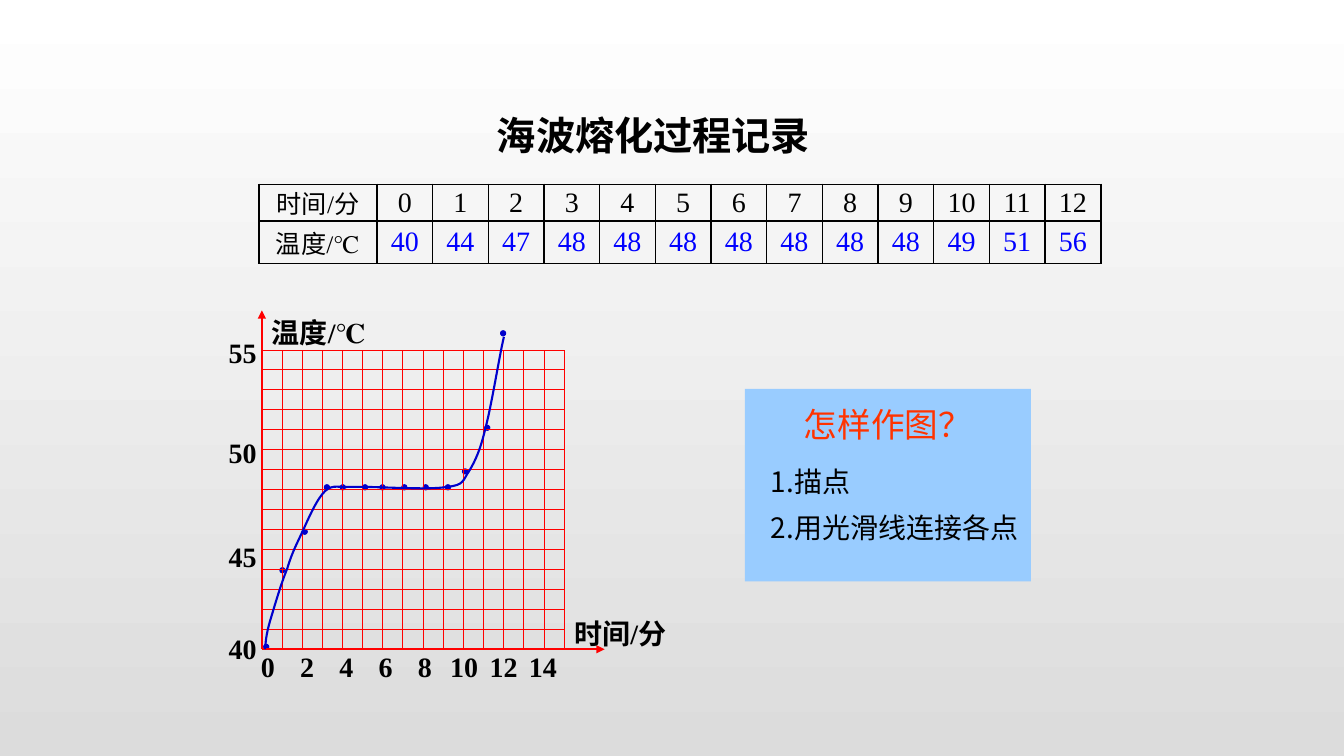
import collections

import lxml.etree
import pptx
import pptx.dml.color
import pptx.enum.shapes
import pptx.enum.text
import pptx.oxml.ns
import pptx.util

Cm = pptx.util.Cm
Pt = pptx.util.Pt
RGBColor = pptx.dml.color.RGBColor
qn = pptx.oxml.ns.qn
ALIGN = pptx.enum.text.PP_ALIGN
ANCHOR = pptx.enum.text.MSO_ANCHOR
SHAPE = pptx.enum.shapes.MSO_SHAPE

BLACK = RGBColor(0x00, 0x00, 0x00)
WHITE = RGBColor(0xFF, 0xFF, 0xFF)
PALE_GRAY = RGBColor(0xDC, 0xDC, 0xDC)
VALUE_BLUE = RGBColor(0x00, 0x00, 0xFF)
CURVE_BLUE = RGBColor(0x00, 0x00, 0xCC)
PANEL_BLUE = RGBColor(0x99, 0xCC, 0xFF)
GRID_RED = RGBColor(0xFF, 0x00, 0x00)
QUESTION_RED = RGBColor(0xFF, 0x33, 0x00)
SANS = "Noto Sans CJK SC"
SERIF = "Times New Roman"

TEMPERATURES = [40, 44, 47, 48, 48, 48, 48, 48, 48, 48, 49, 51, 56]
STEPS = ["1.描点", "2.用光滑线连接各点"]
GRID_COUNT = 15
GRID_WIDTH, GRID_HEIGHT = 7.62, 7.54
DOT_SIZE = 0.13
DOTS = [(0.11, 0.06), (0.52, 1.99), (1.08, 2.96), (1.64, 4.08), (2.04, 4.08),
        (2.6, 4.08), (3.04, 4.08), (3.59, 4.08), (4.13, 4.08), (4.69, 4.08),
        (5.12, 4.48), (5.68, 5.58), (6.08, 7.96)]
CURVE = [(0.08, 0), (0.1, 0.18), (0.1, 0.33), (0.2, 0.69),
         (0.3, 1.02), (0.48, 1.65), (0.64, 2.03),
         (0.76, 2.44), (0.89, 2.67), (1.04, 3),
         (1.19, 3.33), (1.4, 3.81), (1.6, 3.99),
         (1.78, 4.17), (2.01, 4.06), (2.16, 4.09),
         (2.31, 4.09), (2.16, 4.09), (2.57, 4.09),
         (3, 4.09), (4.24, 4.01), (4.67, 4.09),
         (5.11, 4.14), (5.05, 4.24), (5.23, 4.5),
         (5.38, 4.75), (5.51, 5.03), (5.64, 5.59),
         (5.79, 6.15), (5.99, 7.42), (6.1, 7.87)]
TEMPERATURE_MARKS = {40: 0.58, 45: 2.9, 50: 5.51, 55: 8.03}

Box = collections.namedtuple("Box", "left top width height")


def lengths(box):
    return [Cm(value) for value in box]


def place(shape, box):
    shape.left, shape.top, shape.width, shape.height = lengths(box)


def write(paragraph, text, size, color=BLACK, font=SERIF, bold=False, align=ALIGN.LEFT):
    paragraph.alignment = align
    run = paragraph.add_run()
    run.text = text
    run.font.size = Pt(size)
    run.font.bold = bold
    run.font.color.rgb = color
    run.font.name = font
    lxml.etree.SubElement(run.font._element, qn("a:ea"), typeface=SANS)


def add_label(slide, box, text, align=ALIGN.LEFT, wrap=False):
    label = slide.shapes.add_textbox(*lengths(box))
    label.text_frame.word_wrap = wrap
    write(label.text_frame.paragraphs[0], text, 20, bold=True, align=align)


def add_line(slide, start, end, width, arrow=False):
    line = slide.shapes.add_connector(
        pptx.enum.shapes.MSO_CONNECTOR.STRAIGHT, *lengths(start + end))
    line.line.color.rgb = GRID_RED
    line.line.width = Pt(width)
    properties = line.element.spPr
    if arrow:
        lxml.etree.SubElement(properties.find(qn("a:ln")), qn("a:tailEnd"), type="triangle")
    lxml.etree.SubElement(properties, qn("a:effectLst"))


def paint_background(slide):
    fill = slide.background.fill
    fill.gradient()
    fill.gradient_angle = 270
    for stop, color, position in zip(fill.gradient_stops, (WHITE, PALE_GRAY), (0, 1)):
        stop.color.rgb = color
        stop.position = position


def fill_title(slide, box):
    title = slide.shapes.title
    place(title, box)
    title.text_frame.word_wrap = False
    title.text_frame.vertical_anchor = ANCHOR.MIDDLE
    write(title.text_frame.paragraphs[0], "海波熔化过程记录", 28, font=SANS, bold=True)


def set_borders(cell, widths):
    for index, (side, width) in enumerate(zip("LRTB", widths)):
        border = lxml.etree.Element(qn("a:ln" + side), w=str(Pt(width)))
        fill = lxml.etree.SubElement(border, qn("a:solidFill"))
        lxml.etree.SubElement(fill, qn("a:srgbClr"), val=str(BLACK))
        cell._tc.get_or_add_tcPr().insert(index, border)


def add_record_table(slide, box):
    rows = [["时间/分", *range(len(TEMPERATURES))], ["温度/℃", *TEMPERATURES]]
    last = len(TEMPERATURES)
    table = slide.shapes.add_table(len(rows), last + 1, *lengths(box)).table
    table.first_row = table.horz_banding = False
    heading_width = 2.97
    for index, column in enumerate(table.columns):
        column.width = Cm((box.width - heading_width) / last if index else heading_width)
    for row, height in zip(table.rows, (0.91, 1.07)):
        row.height = Cm(height)
    for row_index, values in enumerate(rows):
        for column_index, value in enumerate(values):
            cell = table.cell(row_index, column_index)
            cell.margin_left = cell.margin_right = cell.margin_top = cell.margin_bottom = 0
            cell.vertical_anchor = ANCHOR.MIDDLE
            cell.fill.background()
            outer = (column_index == 0, column_index == last, row_index == 0, row_index == 1)
            set_borders(cell, [1.5 if edge else 1 for edge in outer])
            write(cell.text_frame.paragraphs[0], str(value), 20 if column_index else 18,
                  VALUE_BLUE if row_index and column_index else BLACK, align=ALIGN.CENTER)


def add_method_panel(slide, box):
    panel = slide.shapes.add_shape(SHAPE.RECTANGLE, *lengths(box))
    panel.shadow.inherit = False
    panel.fill.solid()
    panel.fill.fore_color.rgb = PANEL_BLUE
    panel.line.fill.background()
    question = panel.text_frame
    question.vertical_anchor = ANCHOR.TOP
    question.margin_left, question.margin_top = Cm(1.49), Cm(0.38)
    question.margin_right = question.margin_bottom = 0
    write(question.paragraphs[0], "怎样作图？", 24, QUESTION_RED, SANS)

    steps = slide.placeholders[1]
    place(steps, Box(box.left + 0.4, box.top + 1.78, box.width - 0.4, 2.6))
    steps.text_frame.auto_size = pptx.enum.text.MSO_AUTO_SIZE.NONE
    steps.text_frame.word_wrap = False
    for index, step in enumerate(STEPS):
        paragraph = steps.text_frame.paragraphs[0] if index == 0 else steps.text_frame.add_paragraph()
        properties = paragraph._p.get_or_add_pPr()
        properties.set("marL", "0")
        properties.set("indent", "0")
        lxml.etree.SubElement(properties, qn("a:buNone"))
        paragraph.space_before = Pt(8.5 if index else 0)
        write(paragraph, step, 20, font=SANS)
    steps.element.addprevious(panel.element)


def add_curve(slide, points):
    start, *controls = [lengths(point) for point in points]
    builder = slide.shapes.build_freeform(*start)
    builder.add_line_segments(controls, close=False)
    curve = builder.convert_to_shape()
    curve.shadow.inherit = False
    curve.fill.background()
    curve.line.color.rgb = CURVE_BLUE
    curve.line.width = Pt(1.5)
    segments = curve.element.xpath(".//a:lnTo")
    for first in range(0, len(segments), 3):
        bezier = lxml.etree.Element(qn("a:cubicBezTo"))
        segments[first].addprevious(bezier)
        for segment in segments[first:first + 3]:
            bezier.append(segment[0])
            segment.getparent().remove(segment)


def add_melting_graph(slide, box):
    origin_x, origin_y = box.left + 1.09, box.top + 8.54

    def at(x, y):
        return origin_x + x, origin_y - y

    for x, y in DOTS:
        left, top = at(x - DOT_SIZE / 2, y + DOT_SIZE / 2)
        dot = slide.shapes.add_shape(SHAPE.OVAL, *lengths((left, top, DOT_SIZE, DOT_SIZE)))
        dot.shadow.inherit = False
        dot.fill.solid()
        dot.fill.fore_color.rgb = dot.line.color.rgb = CURVE_BLUE
        dot.line.width = Pt(0.75)
    add_line(slide, at(0, 0), at(0, 8.54), 1.5, arrow=True)
    add_line(slide, at(0, 0), at(8.64, 0), 1.5, arrow=True)
    for index in range(1, GRID_COUNT + 1):
        x, y = GRID_WIDTH * index / GRID_COUNT, GRID_HEIGHT * index / GRID_COUNT
        add_line(slide, at(x, GRID_HEIGHT), at(x, 0), 0.75)
        add_line(slide, at(0, y), at(GRID_WIDTH, y), 0.75)
    add_label(slide, Box(origin_x, box.top, 3.7, 1.12), "温度/℃")
    add_label(slide, Box(*at(7.62, 0.94), 2.92, 1.12), "时间/分", wrap=True)
    for index in range(8):
        add_label(slide, Box(*at(0.15 + 0.99 * index - 0.7, 0.13), 1.4, 1.12),
                  str(2 * index), ALIGN.CENTER)
    for temperature, height in TEMPERATURE_MARKS.items():
        add_label(slide, Box(box.left, origin_y - height, 1.4, 1.12), str(temperature))
    add_curve(slide, [at(x, y) for x, y in CURVE])


def main():
    presentation = pptx.Presentation()
    presentation.slide_width, presentation.slide_height = Cm(33.87), Cm(19.05)
    slide = presentation.slides.add_slide(presentation.slide_layouts[1])
    paint_background(slide)
    fill_title(slide, Box(12.27, 2.67, 8.84, 1.45))
    add_record_table(slide, Box(6.53, 4.65, 21.21, 1.98))
    add_method_panel(slide, Box(18.77, 9.8, 7.21, 4.85))
    add_melting_graph(slide, Box(5.51, 7.82, 11.63, 9.53))
    presentation.save("out.pptx")


if __name__ == "__main__":
    main()
